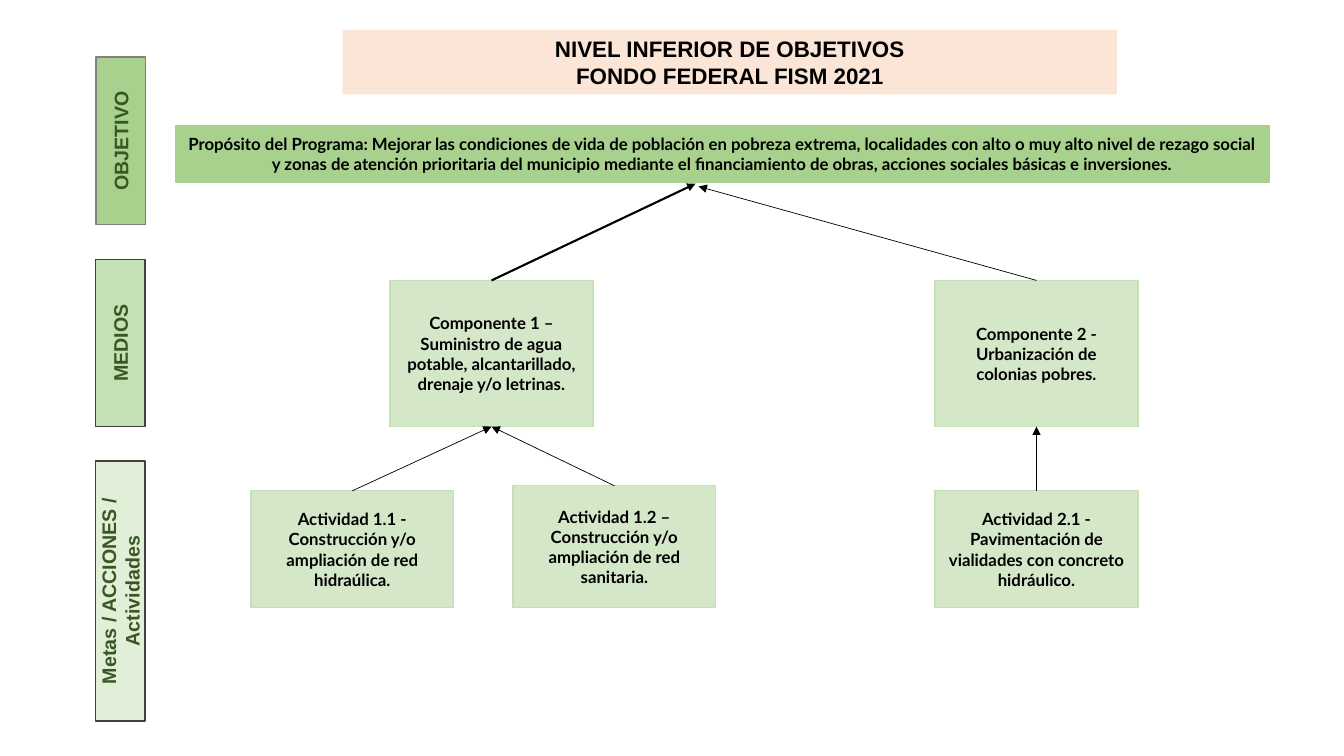
from dataclasses import dataclass
from typing import Optional

from lxml import etree
from pptx import Presentation
from pptx.dml.color import RGBColor
from pptx.enum.shapes import MSO_CONNECTOR, MSO_SHAPE
from pptx.enum.text import MSO_ANCHOR, PP_ALIGN
from pptx.oxml.ns import qn
from pptx.shapes.autoshape import Shape
from pptx.slide import Slide
from pptx.util import Pt

RECTANGLE = MSO_SHAPE.RECTANGLE
PROCESS = MSO_SHAPE.FLOWCHART_PROCESS
STRAIGHT = MSO_CONNECTOR.STRAIGHT
CENTER = PP_ALIGN.CENTER
TOP, MIDDLE = MSO_ANCHOR.TOP, MSO_ANCHOR.MIDDLE
TOP_SITE, BOTTOM_SITE = 0, 2


@dataclass(frozen=True)
class Theme:
    heading_font: str = "Arial"
    body_font: str = "Lato"
    title_size: float = 16
    stage_size: float = 14
    body_size: float = 12
    black: str = "000000"
    peach: str = "FBE5D6"
    green: str = "A9D18E"
    light_green: str = "C5E0B4"
    node_green: str = "70AD47"
    dark_green: str = "385723"
    gray: str = "808080"
    dark_gray: str = "404040"


THEME = Theme()


@dataclass(frozen=True)
class Box:
    text: str
    left: float
    top: float
    width: float
    height: float
    fill: str = THEME.node_green
    opacity: int = 29
    line: Optional[str] = THEME.light_green
    font: str = THEME.body_font
    size: float = THEME.body_size
    color: str = THEME.black
    rotation: float = 0
    preset: MSO_SHAPE = PROCESS
    anchor: MSO_ANCHOR = MIDDLE


@dataclass(frozen=True)
class Stage:
    text: str
    center_x: float
    center_y: float
    length: float
    fill: str
    line: str
    opacity: int = 100


@dataclass(frozen=True)
class Arrow:
    source: str
    target: Optional[str] = None
    end_x: float = 0
    end_y: float = 0
    weight: float = 0.5


STAGE_DEPTH = 35.3
NODE_WIDTH = 144.8
COMPONENT_TOP, COMPONENT_HEIGHT = 200.3, 104.4
ACTIVITY_BOTTOM = 434.1
LEFT_COMPONENT, RIGHT_COMPONENT = 278.7, 668

BANNERS = [
    Box("NIVEL INFERIOR DE OBJETIVOS\nFONDO FEDERAL FISM 2021", 244.8, 21.4, 553, 46,
        fill=THEME.peach, opacity=100, line=None, font=THEME.heading_font,
        size=THEME.title_size, preset=RECTANGLE, anchor=TOP),
    Box("Propósito del Programa: Mejorar las condiciones de vida de población en pobreza "
        "extrema, localidades con alto o muy alto nivel de rezago social y zonas de atención "
        "prioritaria del municipio mediante el financiamiento de obras, acciones sociales "
        "básicas e inversiones.", 125.4, 89.6, 781.2, 40.4,
        fill=THEME.green, opacity=100, line=THEME.green),
]

STAGES = [
    Stage("OBJETIVO", 86.2, 100.6, 119.5, THEME.green, THEME.gray),
    Stage("MEDIOS", 85.8, 245, 119.5, THEME.light_green, THEME.dark_gray),
    Stage("Metas / ACCIONES / Actividades", 85.8, 422.2, 185.8, THEME.light_green,
          THEME.dark_gray, 50),
]


def component(text: str, left: float) -> Box:
    return Box(text, left, COMPONENT_TOP, NODE_WIDTH, COMPONENT_HEIGHT)


def activity(text: str, left: float, top: float = 350.6) -> Box:
    return Box(text, left, top, NODE_WIDTH, ACTIVITY_BOTTOM - top)


NODES = {
    "C1": component("Componente 1 –Suministro de agua potable, alcantarillado, "
                    "drenaje y/o letrinas.", LEFT_COMPONENT),
    "C2": component("Componente 2 - Urbanización de colonias pobres.", RIGHT_COMPONENT),
    "A1.1": activity("Actividad 1.1 - Construcción y/o ampliación de red hidraúlica.", 179.3),
    "A1.2": activity("Actividad 1.2 – Construcción y/o ampliación de red sanitaria.",
                     366.5, 347),
    "A2.1": activity("Actividad 2.1 - Pavimentación de vialidades con concreto hidráulico.",
                     RIGHT_COMPONENT),
}

ARROWS = [
    Arrow("C1", end_x=496.8, end_y=131.2, weight=1.5),
    Arrow("C2", end_x=499, end_y=133.2),
    Arrow("A1.1", "C1"),
    Arrow("A1.2", "C1"),
    Arrow("A2.1", "C2"),
]


def draw_box(slide: Slide, box: Box) -> Shape:
    shape = slide.shapes.add_shape(
        box.preset, Pt(box.left), Pt(box.top), Pt(box.width), Pt(box.height))
    shape.rotation = box.rotation
    shape.shadow.inherit = False
    shape.fill.solid()
    shape.fill.fore_color.rgb = RGBColor.from_string(box.fill)
    if box.opacity < 100:
        color = shape.fill._xPr.find(qn("a:solidFill"))[0]
        etree.SubElement(color, qn("a:alpha"), val=str(box.opacity * 1000))
    if box.line:
        shape.line.color.rgb = RGBColor.from_string(box.line)
        shape.line.width = Pt(1)
    else:
        shape.line.fill.background()
    frame = shape.text_frame
    frame.word_wrap = True
    frame.vertical_anchor = box.anchor
    frame.text = box.text
    for para in frame.paragraphs:
        para.alignment = CENTER
        for span in para.runs:
            span.font.name = box.font
            span.font.size = Pt(box.size)
            span.font.bold = True
            span.font.color.rgb = RGBColor.from_string(box.color)
    return shape


def draw_stage(slide: Slide, stage: Stage) -> None:
    draw_box(slide, Box(
        stage.text, stage.center_x - stage.length / 2, stage.center_y - STAGE_DEPTH / 2,
        stage.length, STAGE_DEPTH, stage.fill, stage.opacity, stage.line,
        THEME.heading_font, THEME.stage_size, THEME.dark_green, 270))


def draw_arrow(slide: Slide, arrow: Arrow, nodes: dict[str, Shape]) -> None:
    connector = slide.shapes.add_connector(
        STRAIGHT, Pt(0), Pt(0), Pt(arrow.end_x), Pt(arrow.end_y))
    connector.begin_connect(nodes[arrow.source], TOP_SITE)
    if arrow.target:
        connector.end_connect(nodes[arrow.target], BOTTOM_SITE)
    connector.line.color.rgb = RGBColor.from_string(THEME.black)
    connector.line.width = Pt(arrow.weight)
    properties = connector._element.spPr
    etree.SubElement(properties.find(qn("a:ln")), qn("a:tailEnd"), type="triangle")
    etree.SubElement(properties, qn("a:effectLst"))


def main() -> None:
    deck = Presentation()
    deck.slide_width, deck.slide_height = Pt(960), Pt(540)
    page = deck.slides.add_slide(deck.slide_layouts[6])
    for banner in BANNERS:
        draw_box(page, banner)
    for stage in STAGES:
        draw_stage(page, stage)
    nodes = {name: draw_box(page, box) for name, box in NODES.items()}
    for arrow in ARROWS:
        draw_arrow(page, arrow, nodes)
    deck.save("out.pptx")


if __name__ == "__main__":
    main()
